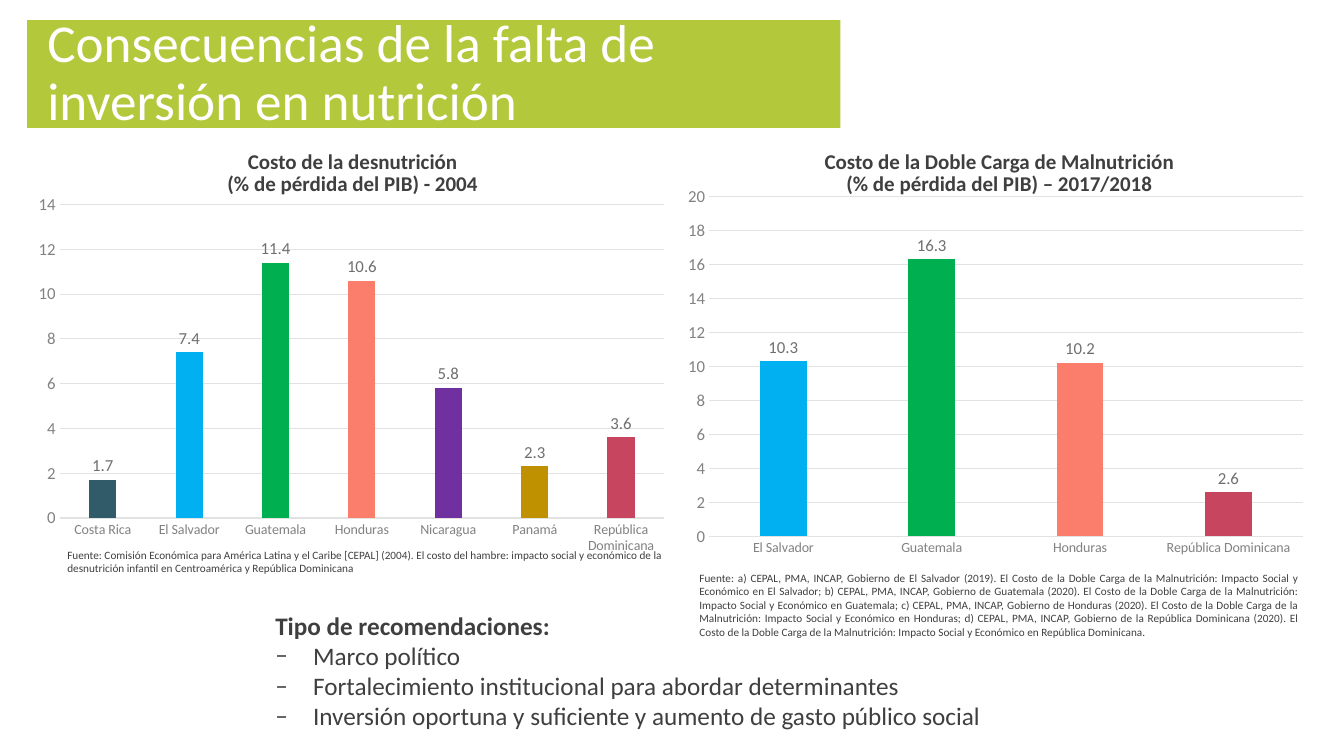
from lxml import etree
from pptx import Presentation
from pptx.chart.data import CategoryChartData
from pptx.dml.color import RGBColor
from pptx.enum.chart import XL_CHART_TYPE as ChartType, XL_LABEL_POSITION as LabelPos, XL_TICK_MARK as Tick
from pptx.enum.text import MSO_ANCHOR as Anchor, MSO_AUTO_SIZE as AutoSize, PP_ALIGN as Align
from pptx.oxml import parse_xml
from pptx.oxml.ns import nsdecls, qn
from pptx.util import Pt


def rgb(hex_color):
    return RGBColor.from_string(hex_color)


def set_font(font, size, color, bold=False):
    values = {"name": "Calibri", "size": Pt(size), "bold": bold}
    for attribute, value in values.items():
        setattr(font, attribute, value)
    font.color.rgb = rgb(color)


INK = "3F3F3F"
GRID = "E2E2E2"
AXIS_INK = "828282"
COUNTRY_COLORS = {
    "Costa Rica": "325B69",
    "El Salvador": "00B0F0",
    "Guatemala": "00B050",
    "Honduras": "FA7E6B",
    "Nicaragua": "7030A0",
    "Panamá": "BF9000",
    "República Dominicana": "C7455E",
}

deck = Presentation()
deck.slide_width, deck.slide_height = Pt(960), Pt(540)
slide = deck.slides.add_slide(deck.slide_layouts[1])

headline = slide.shapes.title
headline_place = {"left": 19.4, "top": 14.4, "width": 581, "height": 77}
for side, length in headline_place.items():
    setattr(headline, side, Pt(length))
headline.fill.solid()
headline.fill.fore_color.rgb = rgb("B3C83B")
headline_format = {
    "text": "Consecuencias de la falta de inversión en nutrición",
    "word_wrap": True,
    "auto_size": AutoSize.NONE,
    "vertical_anchor": Anchor.MIDDLE,
    "margin_left": Pt(14.4),
    "margin_right": Pt(79.2),
    "margin_top": Pt(3.6),
    "margin_bottom": Pt(3.6),
}
for attribute, value in headline_format.items():
    setattr(headline.text_frame, attribute, value)
headline_line = headline.text_frame.paragraphs[0]
headline_line.alignment = Align.LEFT
headline_line.line_spacing = 0.9
set_font(headline_line.font, 38, "FFFFFF")

costs = [
    {
        "values": {"Costa Rica": 1.7, "El Salvador": 7.4, "Guatemala": 11.4, "Honduras": 10.6,
                   "Nicaragua": 5.8, "Panamá": 2.3, "República Dominicana": 3.6},
        "maximum": 15,
        "place": (19.4, 124.6, 464.4, 275.8),
        "plot": {"x": 0.05, "y": 0.02, "w": 0.93, "h": 0.87},
        "heading": ["Costo de la desnutrición", "(% de pérdida del PIB) - 2004"],
        "heading_place": (42, 104.4, 419.8, 45.4),
        "source": "Fuente: Comisión Económica para América Latina y el Caribe [CEPAL] (2004). El costo del hambre: "
                  "impacto social y económico de la desnutrición infantil en Centroamérica y República Dominicana",
        "source_place": (41, 388.1, 442.8, 26.6),
        "source_align": Align.LEFT,
    },
    {
        "values": {"El Salvador": 10.3, "Guatemala": 16.3, "Honduras": 10.2, "República Dominicana": 2.6},
        "maximum": 20,
        "place": (483.8, 126.7, 455.8, 275.8),
        "plot": {"x": 0.05, "y": 0.05, "w": 0.93, "h": 0.88},
        "heading": ["Costo de la Doble Carga de Malnutrición", "(% de pérdida del PIB) – 2017/2018"],
        "heading_place": (504, 104.4, 419.8, 45.4),
        "source": "Fuente: a) CEPAL, PMA, INCAP, Gobierno de El Salvador (2019). El Costo de la Doble Carga de la "
                  "Malnutrición: Impacto Social y Económico en El Salvador; b) CEPAL, PMA, INCAP, Gobierno de "
                  "Guatemala (2020). El Costo de la Doble Carga de la Malnutrición: Impacto Social y Económico en "
                  "Guatemala; c) CEPAL, PMA, INCAP, Gobierno de Honduras (2020). El Costo de la Doble Carga de la "
                  "Malnutrición: Impacto Social y Económico en Honduras; d) CEPAL, PMA, INCAP, Gobierno de la "
                  "República Dominicana (2020). El Costo de la Doble Carga de la Malnutrición: Impacto Social y "
                  "Económico en República Dominicana.",
        "source_place": (492.5, 404.6, 442.8, 55.4),
        "source_align": Align.JUSTIFY,
    },
]

for cost in costs:
    cost_data = CategoryChartData()
    cost_data.categories = list(cost["values"])
    cost_data.add_series("Series 1", list(cost["values"].values()))
    chart = slide.shapes.add_chart(ChartType.COLUMN_CLUSTERED, *map(Pt, cost["place"]), cost_data).chart
    chart.has_legend = False
    chart.has_title = False
    set_font(chart.font, 10, INK)

    layout = parse_xml(
        f'<c:layout {nsdecls("c")}><c:manualLayout><c:layoutTarget val="inner"/>'
        '<c:xMode val="edge"/><c:yMode val="edge"/></c:manualLayout></c:layout>')
    for edge, share in cost["plot"].items():
        etree.SubElement(layout[0], qn(f"c:{edge}")).set("val", str(share))
    plot_area = chart._chartSpace.chart.plotArea
    for automatic in plot_area.findall(qn("c:layout")):
        plot_area.remove(automatic)
    plot_area.insert(0, layout)

    countries, percent = chart.category_axis, chart.value_axis
    for axis, size in ((countries, 10), (percent, 12)):
        axis.major_tick_mark = axis.minor_tick_mark = Tick.NONE
        set_font(axis.tick_labels.font, size, AXIS_INK)
    percent_format = {"minimum_scale": 0, "maximum_scale": cost["maximum"], "major_unit": 2,
                      "has_major_gridlines": True}
    for attribute, value in percent_format.items():
        setattr(percent, attribute, value)
    percent.format.line.fill.background()
    for rule in (countries.format.line, percent.major_gridlines.format.line):
        rule.width = Pt(0.75)
        rule.color.rgb = rgb(GRID)

    bars = chart.plots[0]
    bars_format = {"gap_width": 219, "overlap": -27, "vary_by_categories": False, "has_data_labels": True}
    for attribute, value in bars_format.items():
        setattr(bars, attribute, value)
    bars.data_labels.show_value = True
    bars.data_labels.position = LabelPos.OUTSIDE_END
    set_font(bars.data_labels.font, 12, "6F6F6F")
    for index, country in enumerate(cost["values"]):
        bar_fill = bars.series[0].points[index].format.fill
        bar_fill.solid()
        bar_fill.fore_color.rgb = rgb(COUNTRY_COLORS[country])

    captions = [
        (cost["heading"], cost["heading_place"], Align.CENTER, 0.9, 15, True),
        ([cost["source"]], cost["source_place"], cost["source_align"], 1.0, 8, False),
    ]
    for lines, place, alignment, spacing, size, bold in captions:
        caption = slide.shapes.add_textbox(*map(Pt, place)).text_frame
        caption.word_wrap = True
        caption.text = "\n".join(lines)
        for paragraph in caption.paragraphs:
            paragraph.alignment = alignment
            paragraph.line_spacing = spacing
            set_font(paragraph.font, size, INK, bold)

advice = slide.placeholders[1]
advice_place = {"left": 189.4, "top": 432, "width": 652.3, "height": 94.3}
for side, length in advice_place.items():
    setattr(advice, side, Pt(length))
advice.text_frame.auto_size = AutoSize.NONE
advice.text_frame.text = "\n".join([
    "Tipo de recomendaciones:",
    "Marco político",
    "Fortalecimiento institucional para abordar determinantes",
    "Inversión oportuna y suficiente y aumento de gasto público social",
])
for index, paragraph in enumerate(advice.text_frame.paragraphs):
    paragraph.space_before = Pt(0)
    properties = paragraph._p.get_or_add_pPr()
    indent = Pt(27) if index else 0
    properties.set("marL", str(indent))
    properties.set("indent", str(-indent))
    if index:
        etree.SubElement(properties, qn("a:buFont")).set("typeface", "Calibri")
        etree.SubElement(properties, qn("a:buChar")).set("char", "–")
    else:
        etree.SubElement(properties, qn("a:buNone"))
    set_font(paragraph.font, 18, INK, index == 0)

deck.save("out.pptx")
